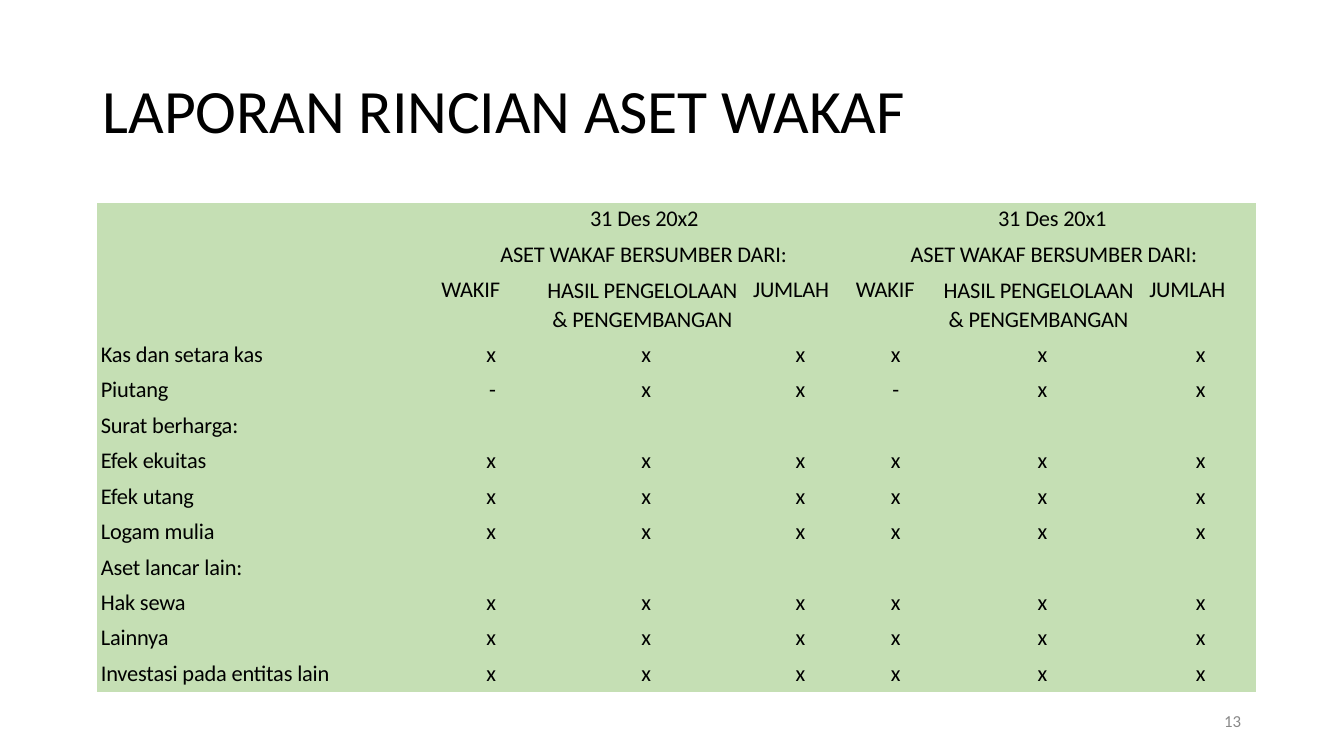
from lxml.etree import SubElement
from pptx import Presentation
from pptx.dml.color import RGBColor
from pptx.enum.text import MSO_ANCHOR, MSO_AUTO_SIZE, PP_ALIGN
from pptx.oxml.ns import qn
from pptx.util import Inches, Pt

LEFT, CENTER, RIGHT = PP_ALIGN.LEFT, PP_ALIGN.CENTER, PP_ALIGN.RIGHT
NO_STYLE = "{2D5ABB26-0587-4C30-8999-92F81FD0307C}"


def color(value):
    return RGBColor.from_string(value)


def write(para, text, size=16, fill="000000", font="Calibri", align=LEFT,
          indent=0, right=0, line=None, spacing=-10):
    """Fill a paragraph; a newline in the text becomes a line break."""
    para.alignment = align
    if line:
        para.line_spacing = line
    properties = para._p.get_or_add_pPr()
    properties.set("marL", str(Inches(indent)))
    properties.set("marR", str(Inches(right)))
    properties.set("indent", "0")
    for number, part in enumerate(text.split("\n")):
        if number:
            para.add_line_break()
        span = para.add_run()
        span.text = part
        span.font.name = font
        span.font.size = Pt(size)
        span.font.color.rgb = color(fill)
        span.font._element.set("spc", str(spacing))


class SlideBuilder:
    table_fill = "C5DFB4"
    muted = "888888"

    def __init__(self, deck):
        self.slide = deck.slides.add_slide(deck.slide_layouts[5])

    def title(self, text, left, top, width, height):
        box = self.slide.shapes.title
        box.left, box.top = Inches(left), Inches(top)
        box.width, box.height = Inches(width), Inches(height)
        frame = box.text_frame
        frame.word_wrap = True
        frame.auto_size = MSO_AUTO_SIZE.NONE
        frame.vertical_anchor = MSO_ANCHOR.MIDDLE
        write(frame.paragraphs[0], text, size=44, line=0.9)

    def page_number(self, text, left, top, width, height):
        box = self.slide.shapes.add_textbox(
            Inches(left), Inches(top), Inches(width), Inches(height))
        frame = box.text_frame
        frame.word_wrap = True
        frame.vertical_anchor = MSO_ANCHOR.MIDDLE
        frame.margin_left = frame.margin_right = 0
        frame.margin_top = frame.margin_bottom = 0
        write(frame.paragraphs[0], text, size=12, fill=self.muted,
              indent=0.04, line=Pt(12.4), spacing=0)

    def table(self, left, top, widths, heights):
        frame = self.slide.shapes.add_table(
            len(heights), len(widths), Inches(left), Inches(top),
            Inches(sum(widths)), Inches(sum(heights)))
        table = frame.table
        table.first_row = table.horz_banding = False
        table._tbl.tblPr.find(qn("a:tableStyleId")).text = NO_STYLE
        for column, width in zip(table.columns, widths):
            column.width = Inches(width)
        for row, height in zip(table.rows, heights):
            row.height = Inches(height)
        for cell in table.iter_cells():
            cell.fill.solid()
            cell.fill.fore_color.rgb = color(self.table_fill)
            cell.margin_left = cell.margin_right = cell.margin_bottom = 0
            cell.margin_top = Inches(0.01)
            # Keeps empty cells as low as filled ones
            end = SubElement(cell.text_frame.paragraphs[0]._p, qn("a:endParaRPr"))
            end.set("sz", "1600")
        return table

    def cell(self, table, row, column, text, top=0.01, **style):
        cell = table.cell(row, column)
        cell.margin_top = Inches(top)
        write(cell.text_frame.paragraphs[0], text, **style)


WIDTHS = [3.1, 1.13, 2.22, 0.95, 0.86, 2.12, 1.12]
TABLE_HEIGHT, FIRST, HEADER, LAST = 4.86, 0.37, 0.64, 0.33
ROW = (TABLE_HEIGHT - FIRST - HEADER - LAST) / 10
HEIGHTS = [FIRST, ROW, HEADER] + [ROW] * 9 + [LAST]

SOURCE = "ASET WAKAF BERSUMBER DARI:"
RETURNS = "HASIL PENGELOLAAN\n & PENGEMBANGAN"
HEADINGS = [
    ("WAKIF", dict(align=RIGHT, right=0.23)),
    (RETURNS, dict(indent=0.24, line=Pt(20.6), top=0)),
    ("JUMLAH", dict(indent=0.06)),
    ("WAKIF", dict(indent=0.13)),
    (RETURNS, dict(indent=0.14, line=Pt(20.6), top=0)),
    ("JUMLAH", dict(indent=0.06)),
]
VALUE_STYLES = [
    dict(align=RIGHT, right=0.27),
    dict(align=CENTER, indent=0.22),
    dict(align=CENTER, indent=0.11),
    dict(align=CENTER, indent=0.19),
    dict(align=CENTER, indent=0.12),
    dict(align=CENTER, indent=0.02),
]
ASSETS = [
    ("Kas dan setara kas", "xxxxxx"),
    ("Piutang", "-xx-xx"),
    ("Surat berharga:", ""),
    ("Efek ekuitas", "xxxxxx"),
    ("Efek utang", "xxxxxx"),
    ("Logam mulia", "xxxxxx"),
    ("Aset lancar lain:", ""),
    ("Hak sewa", "xxxxxx"),
    ("Lainnya", "xxxxxx"),
    ("Investasi pada entitas lain", "xxxxxx"),
]


def main():
    deck = Presentation()
    deck.slide_width, deck.slide_height = Inches(13.33), Inches(7.5)
    page = SlideBuilder(deck)
    page.title("LAPORAN RINCIAN ASET WAKAF", 0.92, 0.4, 11.5, 1.45)

    # Table header: dates, sources, column names
    table = page.table(0.96, 2.01, WIDTHS, HEIGHTS)
    page.cell(table, 0, 2, "31 Des 20x2", top=0.03, align=CENTER, indent=0.18)
    page.cell(table, 0, 5, "31 Des 20x1", top=0.03, indent=0.68)
    for column, indent in ((1, 0.35), (4, 0.09)):
        table.cell(1, column).merge(table.cell(1, column + 2))
        page.cell(table, 1, column, SOURCE, align=CENTER, indent=indent)
    for column, (heading, style) in enumerate(HEADINGS, 1):
        page.cell(table, 2, column, heading, **style)

    # Asset rows
    for row, (asset, values) in enumerate(ASSETS, 3):
        page.cell(table, row, 0, asset, indent=0.04)
        for column, (value, style) in enumerate(zip(values, VALUE_STYLES), 1):
            page.cell(table, row, column, value, spacing=0, **style)

    page.page_number("13", 12.1, 7.07, 0.25, 0.19)
    deck.save("out.pptx")


if __name__ == "__main__":
    main()
